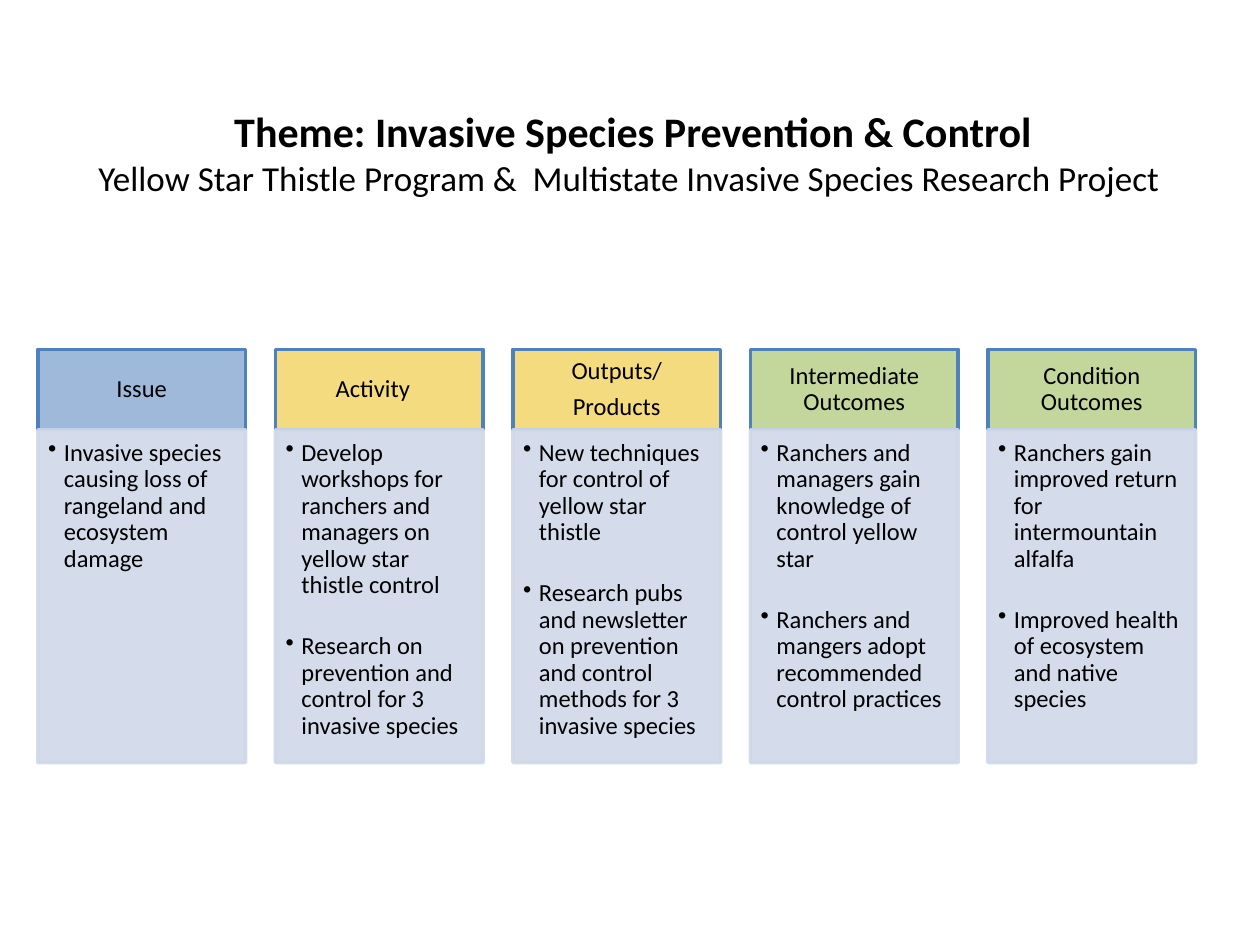
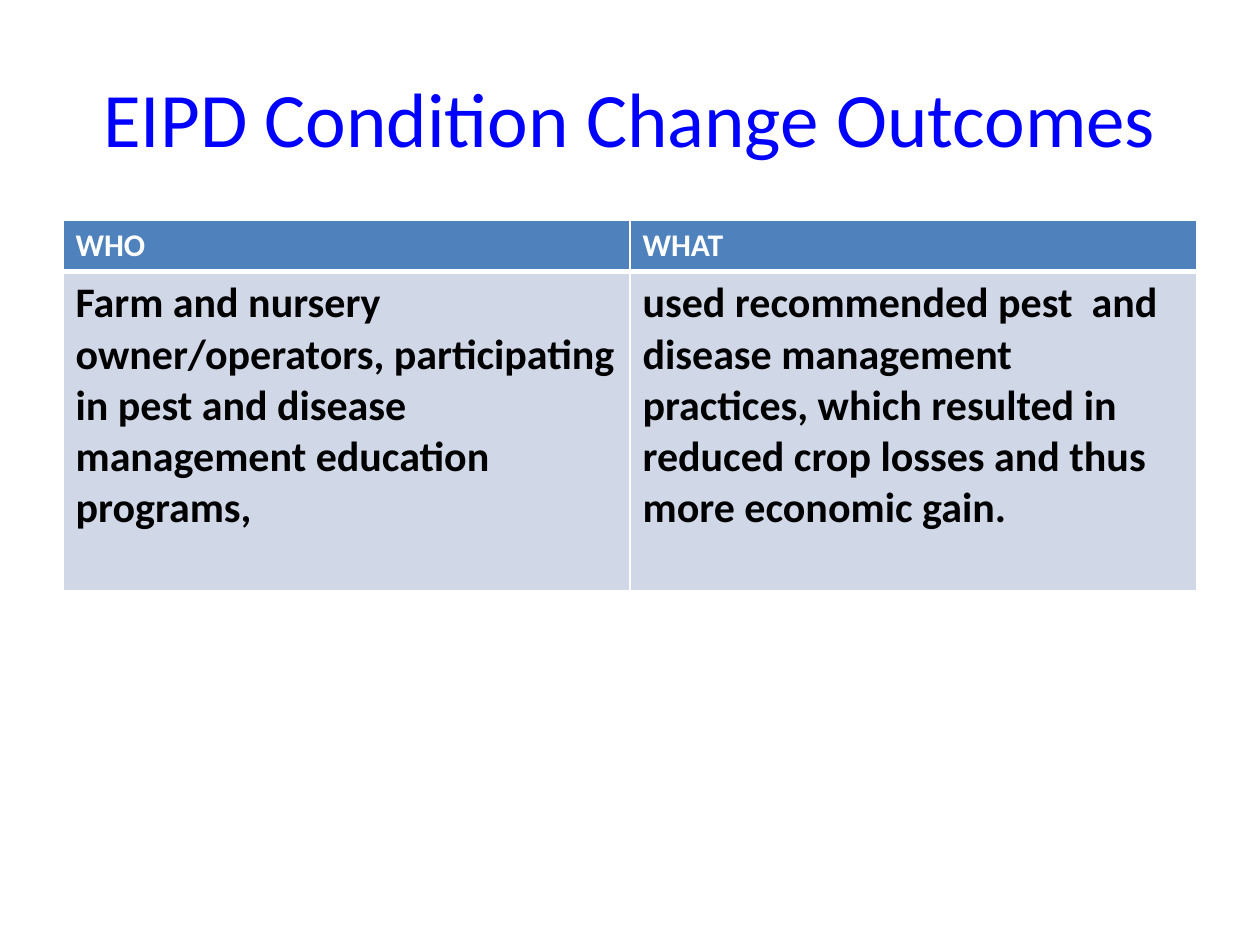
from dataclasses import dataclass

from lxml.etree import SubElement
from pptx import Presentation
from pptx.dml.color import RGBColor
from pptx.enum.shapes import MSO_SHAPE
from pptx.enum.text import MSO_ANCHOR, PP_ALIGN
from pptx.oxml.ns import qn
from pptx.util import Pt


@dataclass(frozen=True)
class Theme:
    font: str = "Calibri"
    black: str = "000000"
    white: str = "FFFFFF"
    title_blue: str = "0000FF"
    blue: str = "4F81BD"
    pale_blue: str = "D0D8E8"
    yellow: str = "F1D055"
    green: str = "C3D69B"
    headline: int = 44
    large: int = 24
    subtitle: int = 20
    table_head: int = 18
    body: int = 14


THEME = Theme()

# Each stage: heading lines, fill, opacity in percent, extra right inset, bullets
STAGES = [
    (["Issue"], THEME.blue, 55, 0,
     ["Invasive species causing loss of rangeland and ecosystem damage"]),
    (["Activity"], THEME.yellow, 75, 7.4,
     ["Develop workshops for ranchers and managers on yellow star thistle control",
      "Research on prevention and control for 3 invasive species"]),
    (["Outputs/", "Products"], THEME.yellow, 75, 0,
     ["New techniques for control of yellow star thistle",
      "Research pubs and newsletter on prevention and control methods for 3 "
      "invasive species"]),
    (["Intermediate Outcomes"], THEME.green, 100, 0,
     ["Ranchers and managers gain knowledge of control yellow star",
      "Ranchers and mangers adopt recommended control practices"]),
    (["Condition Outcomes"], THEME.green, 100, 0,
     ["Ranchers gain improved return for intermountain alfalfa",
      "Improved health of ecosystem and native species"]),
]

OUTCOMES = [
    ["WHO", "WHAT"],
    ["Farm and nursery owner/operators, participating in pest and disease "
     "management education programs,",
     "used recommended pest  and disease management practices, which resulted in "
     "reduced crop losses and thus more economic gain."],
]


def style(paragraph, size, color=THEME.black, bold=False):
    font = paragraph.font
    font.name, font.size, font.bold = THEME.font, Pt(size), bold
    font.color.rgb = RGBColor.from_string(color)


def set_insets(frame, left, top, right, bottom):
    frame.margin_left, frame.margin_top = Pt(left), Pt(top)
    frame.margin_right, frame.margin_bottom = Pt(right), Pt(bottom)


def paragraphs(frame, texts):
    """Write one paragraph per text and return them."""
    frame.word_wrap = True
    result = []
    for index, text in enumerate(texts):
        para = frame.add_paragraph() if index else frame.paragraphs[0]
        para.text = text
        result.append(para)
    return result


def add_title(page, box, lines):
    """Centred title; each line is (text, size, color, bold)."""
    frame = page.shapes.add_textbox(*map(Pt, box)).text_frame
    frame.vertical_anchor = MSO_ANCHOR.MIDDLE
    paras = paragraphs(frame, [line[0] for line in lines])
    for para, (_, *look) in zip(paras, lines):
        para.alignment = PP_ALIGN.CENTER
        style(para, *look)


def set_opacity(fill_parent, percent):
    color = fill_parent.find(qn("a:solidFill"))[0]
    SubElement(color, qn("a:alpha"), val=str(percent * 1000))


def add_panel(page, box, fill, line, fill_opacity=100, line_opacity=100):
    panel = page.shapes.add_shape(MSO_SHAPE.RECTANGLE, *map(Pt, box))
    panel.shadow.inherit = False
    panel.fill.solid()
    panel.fill.fore_color.rgb = RGBColor.from_string(fill)
    panel.line.color.rgb = RGBColor.from_string(line)
    panel.line.width = Pt(2)
    properties = panel.fill._xPr
    set_opacity(properties, fill_opacity)
    set_opacity(properties.find(qn("a:ln")), line_opacity)
    return panel


def add_stage(page, box, stage):
    """Heading panel with a bulleted panel below it."""
    heading, fill, opacity, extra_inset, bullets = stage
    left, top, width, height = box
    head_height = 46

    head = add_panel(page, (left, top, width, head_height), fill, THEME.blue, opacity)
    frame = head.text_frame
    frame.vertical_anchor = MSO_ANCHOR.MIDDLE
    set_insets(frame, 7.9, 4.3, 7.9 + extra_inset, 4.3)
    for para in paragraphs(frame, heading):
        para.alignment, para.line_spacing = PP_ALIGN.CENTER, 0.9
        para.space_after = Pt(4.9)
        style(para, THEME.body)

    body = add_panel(page, (left, top + head_height, width, height - head_height),
                     THEME.pale_blue, THEME.pale_blue, 90, 90)
    frame = body.text_frame
    frame.vertical_anchor = MSO_ANCHOR.TOP
    set_insets(frame, 5.9, 5.9, 7.9, 8.8)
    for para in paragraphs(frame, bullets):
        para.alignment, para.line_spacing = PP_ALIGN.LEFT, 0.9
        para.space_after = Pt(19.7)
        properties = para._p.get_or_add_pPr()
        properties.set("marL", str(Pt(9)))
        properties.set("indent", str(Pt(-9)))
        SubElement(properties, qn("a:buChar"), char="•")
        style(para, THEME.body)


def add_stages(page, box, stages):
    """Row of equal stages with equal gaps."""
    left, top, width, height = box
    stage_width = 118.8
    pitch = (width - stage_width) / (len(stages) - 1)
    for index, stage in enumerate(stages):
        add_stage(page, (left + index * pitch, top, stage_width, height), stage)


def set_borders(cell, bottom_width):
    properties = cell._tc.get_or_add_tcPr()
    sides = {"lnL": 1, "lnR": 1, "lnT": 1, "lnB": bottom_width}
    for index, (side, width) in enumerate(sides.items()):
        line = SubElement(properties, qn(f"a:{side}"), w=str(Pt(width)))
        SubElement(SubElement(line, qn("a:solidFill")), qn("a:srgbClr"), val=THEME.white)
        properties.insert(index, line)


def add_outcome_table(page, box, rows):
    """Two-row table: blue header above pale body cells."""
    table = page.shapes.add_table(len(rows), len(rows[0]), *map(Pt, box)).table
    header_height = 29.2
    table.rows[0].height = Pt(header_height)
    table.rows[1].height = Pt(box[3] - header_height)
    looks = [(THEME.blue, THEME.table_head, THEME.white, 3),
             (THEME.pale_blue, THEME.large, THEME.black, 1)]
    for row, (texts, (fill, size, color, bottom)) in enumerate(zip(rows, looks)):
        for column, text in enumerate(texts):
            cell = table.cell(row, column)
            cell.fill.solid()
            cell.fill.fore_color.rgb = RGBColor.from_string(fill)
            set_borders(cell, bottom)
            cell.text = text
            style(cell.text_frame.paragraphs[0], size, color, True)
    # The header's lower rule is shared with the cells beneath it
    for cell in table.rows[1].cells:
        cell._tc.tcPr.find(qn("a:lnT")).set("w", str(Pt(3)))


def build_theme_page(page):
    add_title(page, (17.3, 41.8, 689, 90), [
        ("Theme: Invasive Species Prevention & Control", THEME.large, THEME.black, True),
        ("Yellow Star Thistle Program &  Multistate Invasive Species Research Project ",
         THEME.subtitle, THEME.black, False)])
    add_stages(page, (21.6, 199.6, 661.7, 236.2), STAGES)


def build_outcomes_page(page):
    add_title(page, (36, 21.6, 648, 90), [
        ("EIPD Condition Change Outcomes", THEME.headline, THEME.title_blue, False)])
    add_outcome_table(page, (36, 126, 648, 211.8), OUTCOMES)


def main():
    deck = Presentation()
    deck.slide_width, deck.slide_height = Pt(720), Pt(540)
    for build in (build_theme_page, build_outcomes_page):
        build(deck.slides.add_slide(deck.slide_layouts[6]))
    deck.save("out.pptx")


if __name__ == "__main__":
    main()
